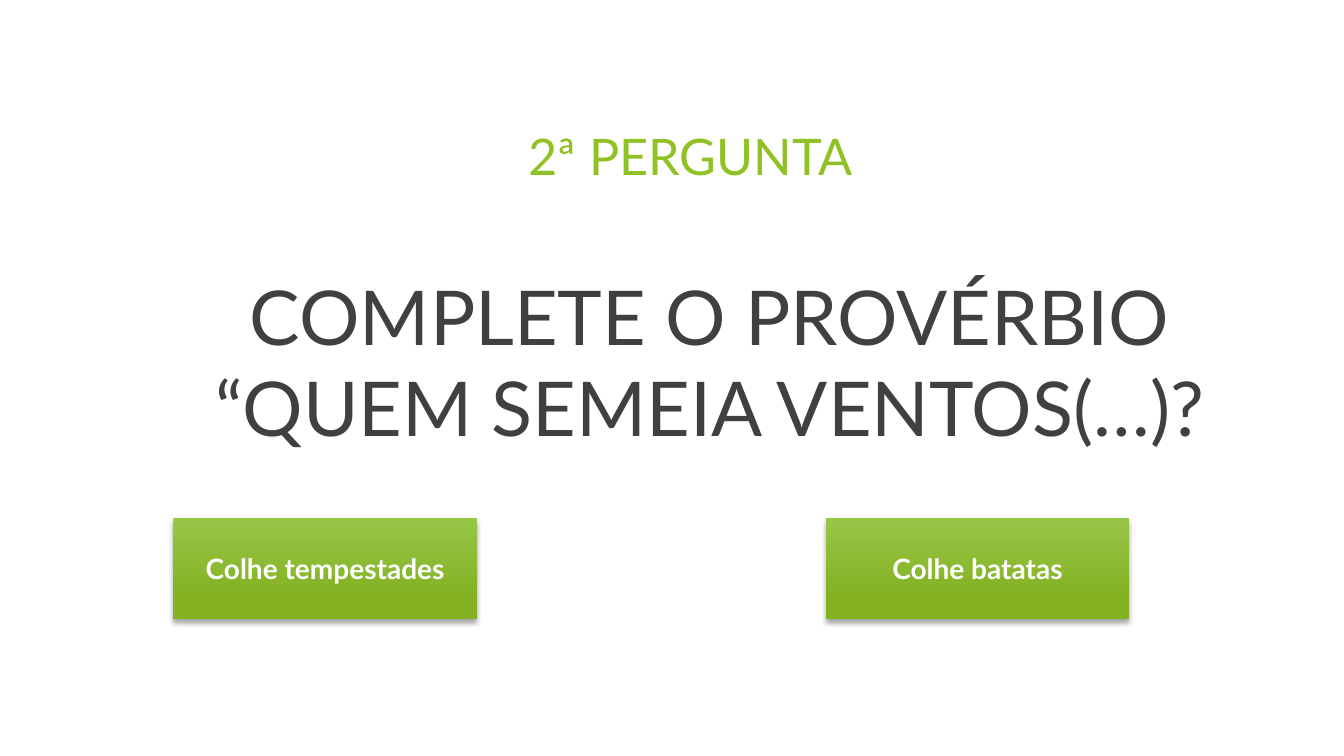
from dataclasses import dataclass

from lxml import etree
from pptx import Presentation
from pptx import util as u
from pptx.dml.color import RGBColor
from pptx.enum import shapes, text
from pptx.oxml import ns
from pptx.shapes.autoshape import Shape
from pptx.slide import Slide

GREEN = RGBColor(0x90, 0xC2, 0x26)
LIGHT_GREEN = RGBColor(0x97, 0xC5, 0x47)
DEEP_GREEN = RGBColor(0x84, 0xB2, 0x23)
CHARCOAL = RGBColor(0x40, 0x40, 0x40)
WHITE = RGBColor(0xFF, 0xFF, 0xFF)
BLACK = RGBColor(0x00, 0x00, 0x00)
FONT = "Lato"


@dataclass(frozen=True)
class Heading:
    wording: str
    left: float
    top: float
    width: float
    height: float
    size: int
    color: RGBColor


@dataclass(frozen=True)
class Answer:
    wording: str
    left: float


HEADINGS = [
    Heading("2ª PERGUNTA", 2.15, 1.19, 9.4, 1.44, 36, GREEN),
    Heading("COMPLETE O PROVÉRBIO “QUEM SEMEIA VENTOS(…)?",
            1.27, 2.63, 11.54, 2.44, 54, CHARCOAL),
]
ANSWERS = [Answer("Colhe tempestades", 1.72), Answer("Colhe batatas", 8.19)]
ANSWER_TOP, ANSWER_WIDTH, ANSWER_HEIGHT = 5.14, 3.01, 1


def write_text(shape: Shape, wording: str, *, size: int, color: RGBColor,
               bold: bool = False,
               anchor: text.MSO_ANCHOR = text.MSO_ANCHOR.TOP) -> None:
    frame = shape.text_frame
    frame.word_wrap = True
    frame.vertical_anchor = anchor
    paragraph = frame.paragraphs[0]
    paragraph.alignment = text.PP_ALIGN.CENTER
    run = paragraph.add_run()
    run.text = wording
    run.font.name = FONT
    run.font.size = u.Pt(size)
    run.font.bold = bold
    run.font.color.rgb = color


def add_shadow(shape: Shape) -> None:
    shape.shadow.inherit = False
    effects = shape._element.spPr.find(ns.qn("a:effectLst"))
    shadow = etree.SubElement(
        effects, ns.qn("a:outerShdw"), blurRad=str(u.Pt(4)),
        dist=str(u.Pt(3)), dir="5400000", rotWithShape="0")
    tint = etree.SubElement(shadow, ns.qn("a:srgbClr"), val=str(BLACK))
    etree.SubElement(tint, ns.qn("a:alpha"), val="35000")


def add_heading(slide: Slide, heading: Heading) -> None:
    box = slide.shapes.add_textbox(
        u.Inches(heading.left), u.Inches(heading.top),
        u.Inches(heading.width), u.Inches(heading.height))
    write_text(box, heading.wording, size=heading.size, color=heading.color)


def add_answer(slide: Slide, answer: Answer) -> None:
    button = slide.shapes.add_shape(
        shapes.MSO_SHAPE.RECTANGLE, u.Inches(answer.left),
        u.Inches(ANSWER_TOP), u.Inches(ANSWER_WIDTH), u.Inches(ANSWER_HEIGHT))
    button.fill.gradient()
    button.fill.gradient_angle = 270
    stops = zip(button.fill.gradient_stops,
                [(0, LIGHT_GREEN), (0.78, DEEP_GREEN)])
    for stop, (position, color) in stops:
        stop.position = position
        stop.color.rgb = color
    button.line.fill.background()
    add_shadow(button)
    write_text(button, answer.wording, size=20, color=WHITE, bold=True,
               anchor=text.MSO_ANCHOR.MIDDLE)


def main() -> None:
    deck = Presentation()
    deck.slide_width = u.Inches(13.33)
    deck.slide_height = u.Inches(7.5)
    slide = deck.slides.add_slide(deck.slide_layouts[6])
    for heading in HEADINGS:
        add_heading(slide, heading)
    for answer in ANSWERS:
        add_answer(slide, answer)
    deck.save("out.pptx")


if __name__ == "__main__":
    main()
